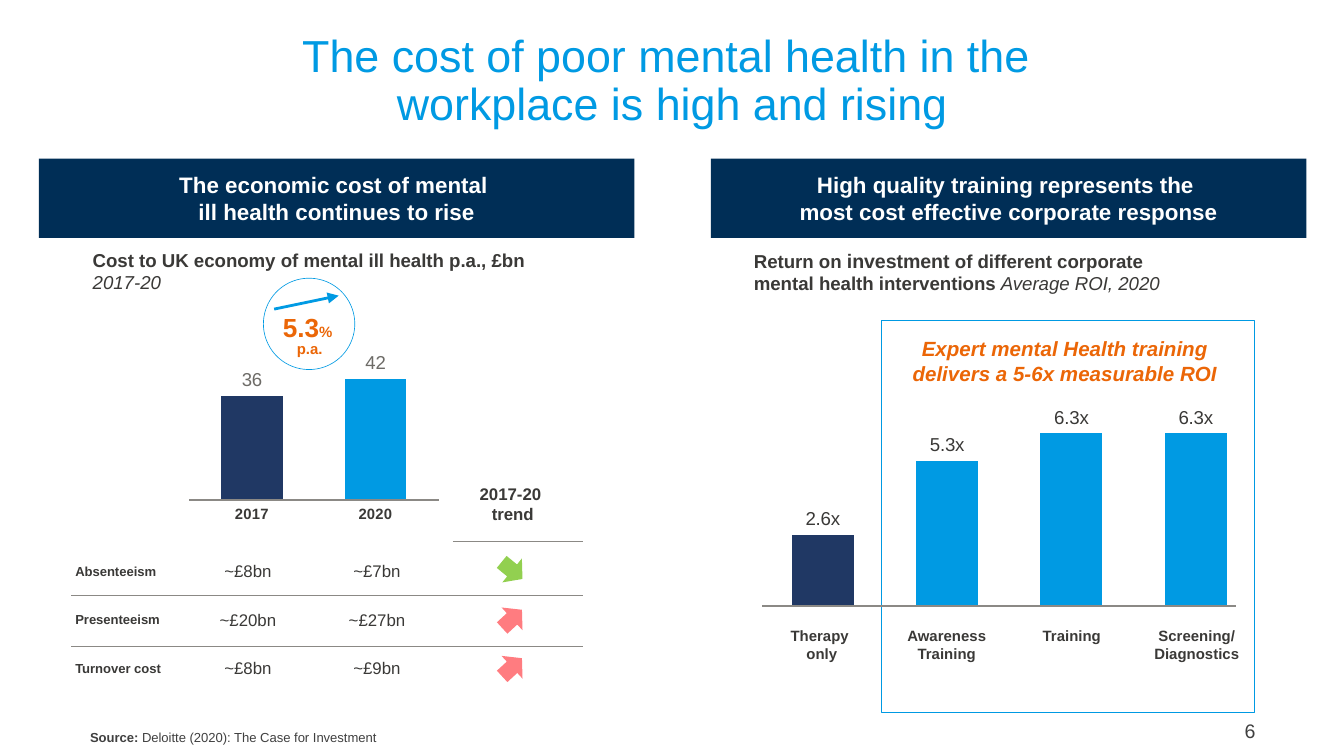
"""Build the slide on the cost of poor mental health in the workplace."""
from lxml.etree import SubElement
from pptx import Presentation
from pptx.chart.data import CategoryChartData
from pptx.dml.color import RGBColor
from pptx.enum.chart import XL_CHART_TYPE, XL_LABEL_POSITION, XL_TICK_LABEL_POSITION, XL_TICK_MARK
from pptx.enum.shapes import MSO_CONNECTOR, MSO_SHAPE
from pptx.enum.text import MSO_ANCHOR, PP_ALIGN
from pptx.oxml import parse_xml
from pptx.oxml.ns import nsdecls, qn
from pptx.util import Inches, Pt

BLUE, NAVY, DARK, GREY = "009AE3", "203864", "3A3937", "8B8985"
ORANGE, BAND, RED, GREEN = "EB6607", "002E56", "FF7C80", "92D050"
LEFT, MID, RIGHT = PP_ALIGN.LEFT, PP_ALIGN.CENTER, PP_ALIGN.RIGHT
TOP, CORE, BASE = MSO_ANCHOR.TOP, MSO_ANCHOR.MIDDLE, MSO_ANCHOR.BOTTOM

deck = Presentation()
deck.slide_width, deck.slide_height = Inches(10), Inches(5.625)
slide = deck.slides.add_slide(deck.slide_layouts[6])
shapes = slide.shapes


def paint(fill, color):
    """Give a fill one solid colour, or none."""
    if color:
        fill.solid()
        fill.fore_color.rgb = RGBColor.from_string(color)
    else:
        fill.background()


def write(text, at, size=8, color=DARK, bold=False, italic=False, align=LEFT, anchor=TOP,
          pad=(0, 0, 0, 0), lead=None, after=None, box=False, fill=None, line=None):
    """Place text, or a list of (text, changes) runs, in a text box or a rectangle."""
    place = [Inches(v) for v in at]
    if box:
        shape = shapes.add_shape(MSO_SHAPE.RECTANGLE, *place)
        shape.shadow.inherit = False
        paint(shape.fill, fill)
        paint(shape.line.fill, line)
        if line:
            shape.line.width = Pt(0.35)
    else:
        shape = shapes.add_textbox(*place)
    frame = shape.text_frame
    frame.word_wrap, frame.vertical_anchor = True, anchor
    frame.margin_left, frame.margin_top, frame.margin_right, frame.margin_bottom = [Inches(v) for v in pad]
    para = frame.paragraphs[0]
    for words, change in [(text, {})] if isinstance(text, str) else text:
        if change.get("new"):
            para = frame.add_paragraph()
        para.alignment, para.line_spacing = align, lead
        para.space_after = after
        for i, part in enumerate(words.split("\n")):
            if i:
                para.add_line_break()
            run = para.add_run()
            run.text = part
            font = run.font
            font.name, font.size = "Arial", Pt(change.get("size", size))
            font.bold, font.italic = change.get("bold", bold), change.get("italic", italic)
            paint(font.fill, color)


write("The cost of poor mental health in the \nworkplace is high and rising", (0.69, 0.37, 8.62, 0.6),
      size=24, color=BLUE, align=MID, anchor=BASE, lead=0.9)
write([("Source: ", {"bold": True}), ("Deloitte (2020): The Case for Investment", {})],
      (0.67, 5.37, 6.08, 0.18), size=7, color="404040", anchor=CORE, lead=1.5, box=True, fill="FFFFFF")
write([("Cost to UK economy of mental ill health p.a., £bn", {}),
       ("2017-20", {"new": True, "bold": False, "italic": True})],
      (0.69, 1.85, 3.7, 0.34), size=10, bold=True)
write([("Return on ", {}), ("investment", {"size": 10.5}),
       (" of different corporate \nmental health interventions ", {}),
       ("Average ROI, 2020", {"bold": False, "italic": True})],
      (5.61, 1.85, 3.7, 0.35), size=10, bold=True)

heads = ["The economic cost of mental \nill health continues to rise",
         "High quality training represents the \nmost cost effective corporate response"]
for x, head in zip((0.29, 5.29), heads):
    write(head, (x, 1.18, 4.43, 0.59), size=12, color="FFFFFF", bold=True, align=MID, anchor=CORE,
          pad=(0.1, 0.05, 0.1, 0.05), box=True, fill=BAND)

plots = [
    ((1.41, 2.2, 1.85, 1.73), ["2017", "2020"], [36, 42], 50, "0", "6D6B67", (0, 0.26, 1, 0.62)),
    ((5.66, 3.03, 3.7, 3.01), ["1", "2", "3", "4"], [2.6, 5.3, 6.3, 6.3], 7, "0.0\\x", DARK,
     (0, 0.016, 1, 0.476)),
]
for at, cats, vals, top, form, shade, inner in plots:
    data = CategoryChartData()
    data.categories = cats
    data.add_series("Series 1", vals)
    chart = shapes.add_chart(XL_CHART_TYPE.COLUMN_CLUSTERED, *[Inches(v) for v in at], data).chart
    chart.has_legend = chart.has_title = False
    chart.font.name, chart.font.size = "Arial", Pt(10)
    paint(chart.font.fill, DARK)
    axis, scale = chart.category_axis, chart.value_axis
    scale.minimum_scale, scale.maximum_scale = 0, top
    scale.has_major_gridlines = scale.visible = False
    axis.major_tick_mark = XL_TICK_MARK.NONE
    axis.tick_label_position = XL_TICK_LABEL_POSITION.NEXT_TO_AXIS
    axis.tick_labels.font.size, axis.tick_labels.font.bold = Pt(8), True
    paint(axis.format.line.fill, "E2E1E0")
    axis.visible = len(cats) == 2
    plot = chart.plots[0]
    plot.gap_width, plot.vary_by_categories = 100, False
    bars = plot.series[0]
    paint(bars.format.fill, BLUE)
    paint(bars.points[0].format.fill, NAVY)
    plot.has_data_labels = True
    label = plot.data_labels
    label.show_value, label.position = True, XL_LABEL_POSITION.OUTSIDE_END
    label.number_format, label.number_format_is_linked = form, False
    label.font.size, label.font.name = Pt(10), "Arial"
    paint(label.font.fill, shade)
    area = chart.element.xpath("//c:plotArea")[0]
    for old in area.findall(qn("c:layout")):
        area.remove(old)
    parts = [("layoutTarget", "inner"), ("xMode", "edge"), ("yMode", "edge")] + list(zip("xywh", inner))
    marks = "".join(f'<c:{name} val="{val}"/>' for name, val in parts)
    area.insert(0, parse_xml(f"<c:layout {nsdecls('c')}><c:manualLayout>{marks}</c:manualLayout></c:layout>"))

rows = [("Absenteeism", "~£8bn", "~£7bn", GREEN, 39.4),
        ("Presenteeism", "~£20bn", "~£27bn", RED, 317.3),
        ("Turnover cost", "~£8bn", "~£9bn", RED, 317.3)]
pad = (0.07, 0.04, 0.07, 0.04)
for i, (name, first, last, color, turn) in enumerate(rows):
    y = 4.1 + 0.36 * i
    write(name, (0.49, y, 0.88, 0.3), size=7, bold=True, anchor=CORE, pad=pad)
    for x, cost in ((1.38, first), (2.34, last)):
        write(cost, (x, y, 0.93, 0.3), size=9, align=MID, anchor=CORE, pad=pad, after=Pt(2.2))
    arrow = shapes.add_shape(MSO_SHAPE.RIGHT_ARROW, Inches(3.71), Inches(y + 0.03), Inches(0.2), Inches(0.23))
    arrow.rotation, arrow.shadow.inherit = turn, False
    paint(arrow.fill, color)
    paint(arrow.line.fill, None)
write("2017-20 \ntrend", (3.29, 3.68, 1.05, 0.22), size=9, bold=True, align=MID, anchor=BASE)

write("Expert mental Health training \ndelivers a 5-6x measurable ROI ", (6.56, 2.38, 2.77, 2.92), size=11,
      color=ORANGE, bold=True, italic=True, align=MID, pad=(0, 0.12, 0, 0), box=True, line=BLUE)
names = ["Therapy \nonly", "Awareness Training", "Training", "Screening/\nDiagnostics"]
for i, name in enumerate(names):
    write(name, (5.68 + 0.93 * i, 4.66, 0.87, 0.35), bold=True, align=MID)

rules = [(5.67, 4.51, 9.2, 4.51, GREY, 1), (0.53, 4.43, 4.34, 4.43, GREY, 0.5),
         (0.53, 4.81, 4.34, 4.81, GREY, 0.5), (3.37, 4.03, 4.34, 4.03, GREY, 0.5),
         (1.41, 3.72, 3.27, 3.72, GREY, 1), (2.04, 2.3, 2.52, 2.2, BLUE, 1.5)]
for *ends, color, width in rules:
    rule = shapes.add_connector(MSO_CONNECTOR.STRAIGHT, *[Inches(v) for v in ends])
    paint(rule.line.fill, color)
    rule.line.width = Pt(width)
    if color == BLUE:
        SubElement(rule.line._get_or_add_ln(), qn("a:tailEnd"), type="triangle")
    SubElement(rule._element.spPr, qn("a:effectLst"))

write([("5.3", {"size": 14}), ("% \np.a.", {})], (1.94, 2.35, 0.73, 0.32), color=ORANGE, bold=True,
      align=MID, anchor=CORE, lead=0.8)
ring = shapes.add_shape(MSO_SHAPE.OVAL, Inches(1.96), Inches(2.07), Inches(0.68), Inches(0.68))
ring.shadow.inherit = False
paint(ring.fill, None)
paint(ring.line.fill, BLUE)
ring.line.width = Pt(0.35)
write("6", (8.55, 5.29, 0.79, 0.33), size=10.5, color="404040", align=RIGHT, anchor=CORE, pad=(0, 0, 0, 0.04))

deck.save("out.pptx")
